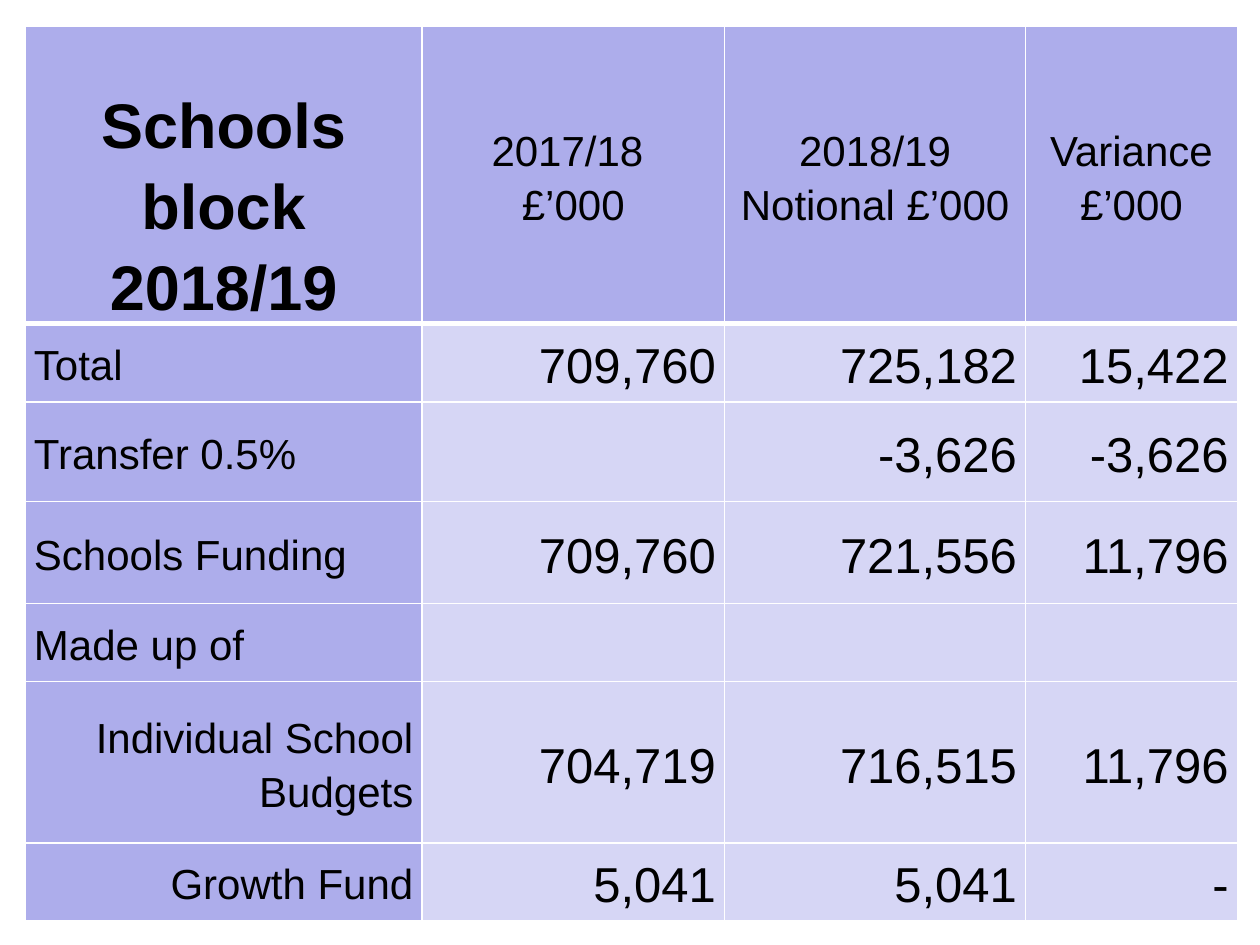
from dataclasses import dataclass

from lxml import etree
from pptx import Presentation
from pptx.dml.color import RGBColor
from pptx.enum.text import MSO_ANCHOR, PP_ALIGN
from pptx.oxml.ns import qn
from pptx.util import Inches, Pt

LEFT, CENTER, RIGHT = PP_ALIGN.LEFT, PP_ALIGN.CENTER, PP_ALIGN.RIGHT
MIDDLE, BOTTOM = MSO_ANCHOR.MIDDLE, MSO_ANCHOR.BOTTOM
BLANK_LAYOUT = 6
FONT = "Arial"
COLORS = {"heading": "ADADEB", "body": "D6D6F5", "text": "000000", "border": "FFFFFF"}
COLUMN_WIDTHS = [3.15, 2.4, 2.39, 1.68]
HEADER_HEIGHT = 2.36
HEADER_RULE, THIN_RULE = 3, 1


@dataclass
class TextStyle:
    size: int
    align: PP_ALIGN
    bold: bool = False
    anchor: MSO_ANCHOR = MIDDLE


@dataclass
class BudgetRow:
    label: str
    values: list[str]
    height: float = 0.62
    label_align: PP_ALIGN = LEFT


TITLE = TextStyle(36, CENTER, bold=True, anchor=BOTTOM)
HEADING = TextStyle(24, CENTER)
AMOUNT = TextStyle(28, RIGHT)

HEADERS = ["Schools block 2018/19", "2017/18 \n£’000", "2018/19 Notional £’000", "Variance\n£’000"]
ROWS = [
    BudgetRow("Total", ["709,760", "725,182", "15,422"]),
    BudgetRow("Transfer 0.5%", ["", "-3,626", "-3,626"], 0.79),
    BudgetRow("Schools Funding", ["709,760", "721,556", "11,796"], 0.81),
    BudgetRow("Made up of", ["", "", ""]),
    BudgetRow("Individual School Budgets", ["704,719", "716,515", "11,796"], 1.28, RIGHT),
    BudgetRow("Growth Fund", ["5,041", "5,041", "-"], label_align=RIGHT),
]


def set_borders(cell, top: float, bottom: float) -> None:
    properties = cell._tc.get_or_add_tcPr()
    widths = {"a:lnL": THIN_RULE, "a:lnR": THIN_RULE, "a:lnT": top, "a:lnB": bottom}
    for tag, width in widths.items():
        line = etree.SubElement(properties, qn(tag), w=str(Pt(width)))
        fill = etree.SubElement(line, qn("a:solidFill"))
        etree.SubElement(fill, qn("a:srgbClr"), val=COLORS["border"])


def write_cell(cell, text: str, style: TextStyle, fill: str) -> None:
    cell.fill.solid()
    cell.fill.fore_color.rgb = RGBColor.from_string(COLORS[fill])
    cell.margin_left = cell.margin_right = Inches(0.07)
    cell.margin_top = cell.margin_bottom = 0
    cell.vertical_anchor = style.anchor
    if not text:
        return
    frame = cell.text_frame
    for index, line in enumerate(text.split("\n")):
        para = frame.add_paragraph() if index else frame.paragraphs[0]
        para.alignment = style.align
        para.line_spacing = 1.15
        span = para.add_run()
        span.text = line
        span.font.name = FONT
        span.font.size = Pt(style.size)
        span.font.bold = style.bold
        span.font.color.rgb = RGBColor.from_string(COLORS["text"])


def add_budget_table(page) -> None:
    heights = [HEADER_HEIGHT] + [row.height for row in ROWS]
    table = page.shapes.add_table(
        len(heights), len(COLUMN_WIDTHS), Inches(0.2), Inches(0.21),
        Inches(sum(COLUMN_WIDTHS)), Inches(sum(heights)),
    ).table
    for column, width in zip(table.columns, COLUMN_WIDTHS):
        column.width = Inches(width)
    for index, height in enumerate(heights):
        table.rows[index].height = Inches(height)
        for cell in table.rows[index].cells:
            set_borders(
                cell,
                top=HEADER_RULE if index == 1 else THIN_RULE,
                bottom=HEADER_RULE if index == 0 else THIN_RULE,
            )
    for column, text in enumerate(HEADERS):
        write_cell(table.cell(0, column), text, HEADING if column else TITLE, "heading")
    for index, row in enumerate(ROWS, start=1):
        write_cell(table.cell(index, 0), row.label, TextStyle(24, row.label_align), "heading")
        for column, value in enumerate(row.values, start=1):
            write_cell(table.cell(index, column), value, AMOUNT, "body")


def main() -> None:
    deck = Presentation()
    deck.slide_width, deck.slide_height = Inches(10), Inches(7.5)
    page = deck.slides.add_slide(deck.slide_layouts[BLANK_LAYOUT])
    add_budget_table(page)
    deck.save("out.pptx")


if __name__ == "__main__":
    main()
